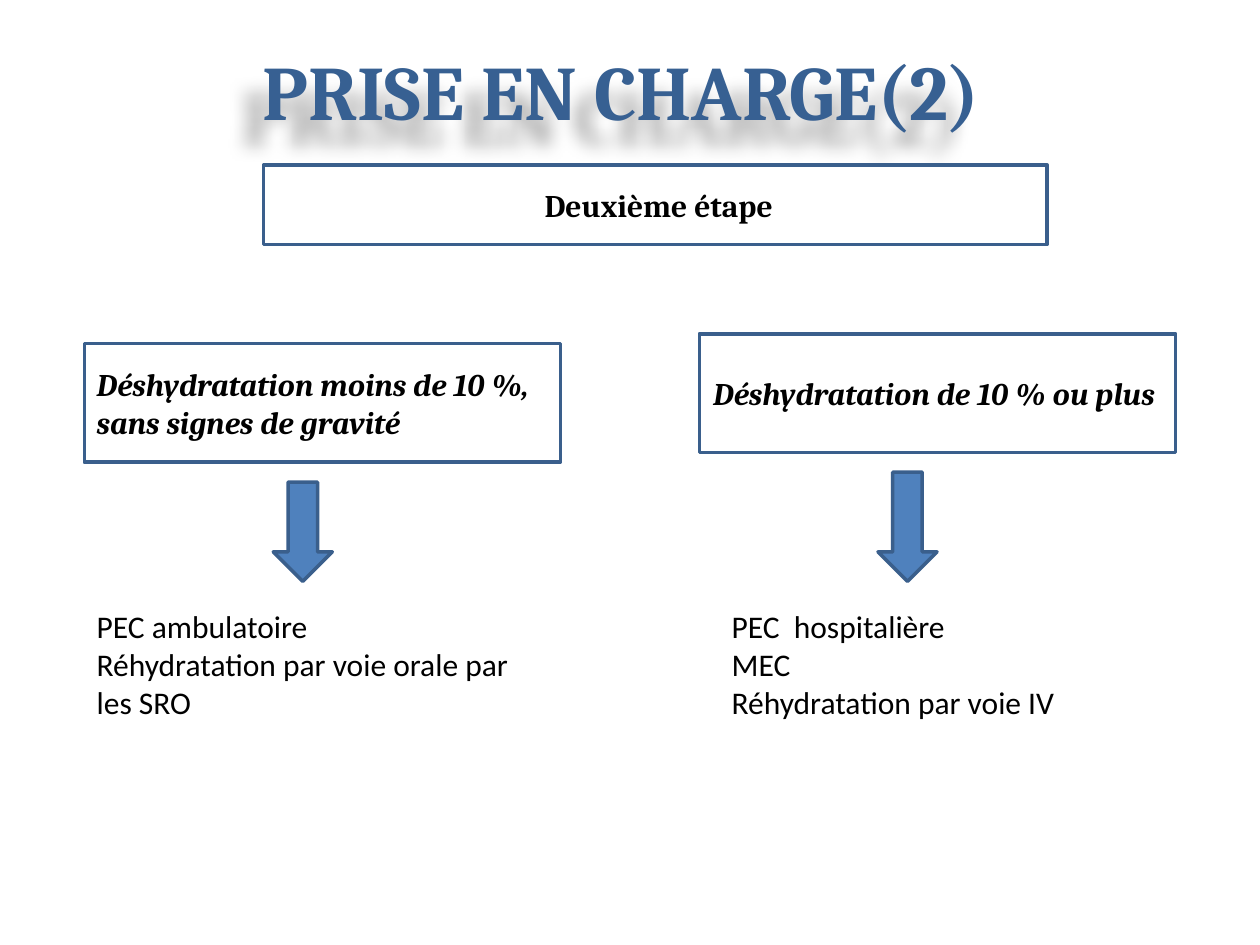
from dataclasses import dataclass

from lxml.etree import SubElement
from pptx import Presentation
from pptx.dml.color import RGBColor
from pptx.enum.shapes import MSO_SHAPE as Shape
from pptx.enum.text import MSO_ANCHOR as Anchor, MSO_AUTO_SIZE as AutoSize, PP_ALIGN as Align
from pptx.oxml.ns import qn
from pptx.util import Cm, Pt


@dataclass(frozen=True)
class Theme:
    title: RGBColor = RGBColor(0x37, 0x60, 0x92)
    outline: RGBColor = RGBColor(0x3A, 0x5F, 0x8C)
    arrow: RGBColor = RGBColor(0x4F, 0x81, 0xBD)
    paper: RGBColor = RGBColor(0xFF, 0xFF, 0xFF)
    ink: RGBColor = RGBColor(0, 0, 0)
    heading_font: str = "Cambria"
    body_font: str = "Calibri"
    title_size: Pt = Pt(44)
    body_size: Pt = Pt(18)
    line_width: Pt = Pt(2)


@dataclass(frozen=True)
class Box:
    """A rectangle in centimetres."""
    left: float
    top: float
    width: float
    height: float

    @property
    def bottom(self):
        return self.top + self.height

    @property
    def lengths(self):
        return [Cm(n) for n in (self.left, self.top, self.width, self.height)]


THEME = Theme()
LABEL_HEIGHT = 2.39
ARROW_WIDTH = 1.19
ARROW_GAP = 0.4
CARE_HEIGHT = 2.56


def write(frame, lines, font, size, color=THEME.ink, align=Align.LEFT, bold=False, italic=False):
    frame.word_wrap = True
    frame.text = "\n".join(lines)
    for paragraph in frame.paragraphs:
        paragraph.alignment = align
        paragraph.font.name = font
        paragraph.font.size = size
        paragraph.font.color.rgb = color
        paragraph.font.bold = bold
        paragraph.font.italic = italic


def add_outlined(slide, kind, box, fill):
    shape = slide.shapes.add_shape(kind, *box.lengths)
    shape.shadow.inherit = False
    shape.fill.solid()
    shape.fill.fore_color.rgb = fill
    shape.line.color.rgb = THEME.outline
    shape.line.width = THEME.line_width
    return shape


def add_label(slide, box, text, align, italic=False):
    frame = add_outlined(slide, Shape.RECTANGLE, box, THEME.paper).text_frame
    frame.vertical_anchor = Anchor.MIDDLE
    write(frame, [text], THEME.heading_font, THEME.body_size,
          align=align, bold=True, italic=italic)


def cast_shadow(shape):
    """Give the text a soft shadow to its lower left."""
    effects = SubElement(shape.element.spPr, qn("a:effectLst"))
    shadow = SubElement(effects, qn("a:outerShdw"), blurRad="127000", dist="228600",
                        dir="8100000", algn="tr", rotWithShape="0")
    black = SubElement(shadow, qn("a:srgbClr"), val="000000")
    SubElement(black, qn("a:alpha"), val="35000")


def add_title(slide, box, text):
    title = slide.shapes.add_textbox(*box.lengths)
    write(title.text_frame, [text], THEME.heading_font, THEME.title_size,
          THEME.title, Align.CENTER, bold=True)
    cast_shadow(title)


def add_branch(slide, box, severity, align, care, arrow_offset, care_indent=0.0):
    """Severity label at the top, care lines at the bottom, an arrow between."""
    label = Box(box.left, box.top, box.width, LABEL_HEIGHT)
    care_box = Box(box.left + care_indent, box.bottom - CARE_HEIGHT,
                   box.width - care_indent, CARE_HEIGHT)
    arrow_top = label.bottom + ARROW_GAP
    arrow = Box(box.left + arrow_offset, arrow_top, ARROW_WIDTH,
                care_box.top - ARROW_GAP - arrow_top)

    add_label(slide, label, severity, align, italic=True)
    frame = slide.shapes.add_textbox(*care_box.lengths).text_frame
    frame.auto_size = AutoSize.SHAPE_TO_FIT_TEXT
    write(frame, care, THEME.body_font, THEME.body_size)
    add_outlined(slide, Shape.DOWN_ARROW, arrow, THEME.arrow)


def main():
    deck = Presentation()
    deck.slide_width, deck.slide_height = Cm(25.4), Cm(19.05)
    slide = deck.slides.add_slide(deck.slide_layouts[6])

    add_title(slide, Box(1.27, 0.76, 22.86, 3.18), "PRISE EN CHARGE(2) ")
    add_label(slide, Box(5.31, 3.33, 15.8, 1.6), " Deuxième étape", Align.CENTER)
    add_branch(slide, Box(1.7, 6.93, 9.6, 7.75),
               "Déshydratation moins de 10 %,  sans signes de gravité", Align.LEFT,
               ["PEC ambulatoire", "Réhydratation par voie orale par les SRO"],
               arrow_offset=3.81)
    add_branch(slide, Box(14.1, 6.73, 9.6, 7.95),
               "Déshydratation de 10 % ou plus ", Align.CENTER,
               ["PEC  hospitalière", "MEC", "Réhydratation par voie IV"],
               arrow_offset=3.6, care_indent=0.4)
    deck.save("out.pptx")


if __name__ == "__main__":
    main()
